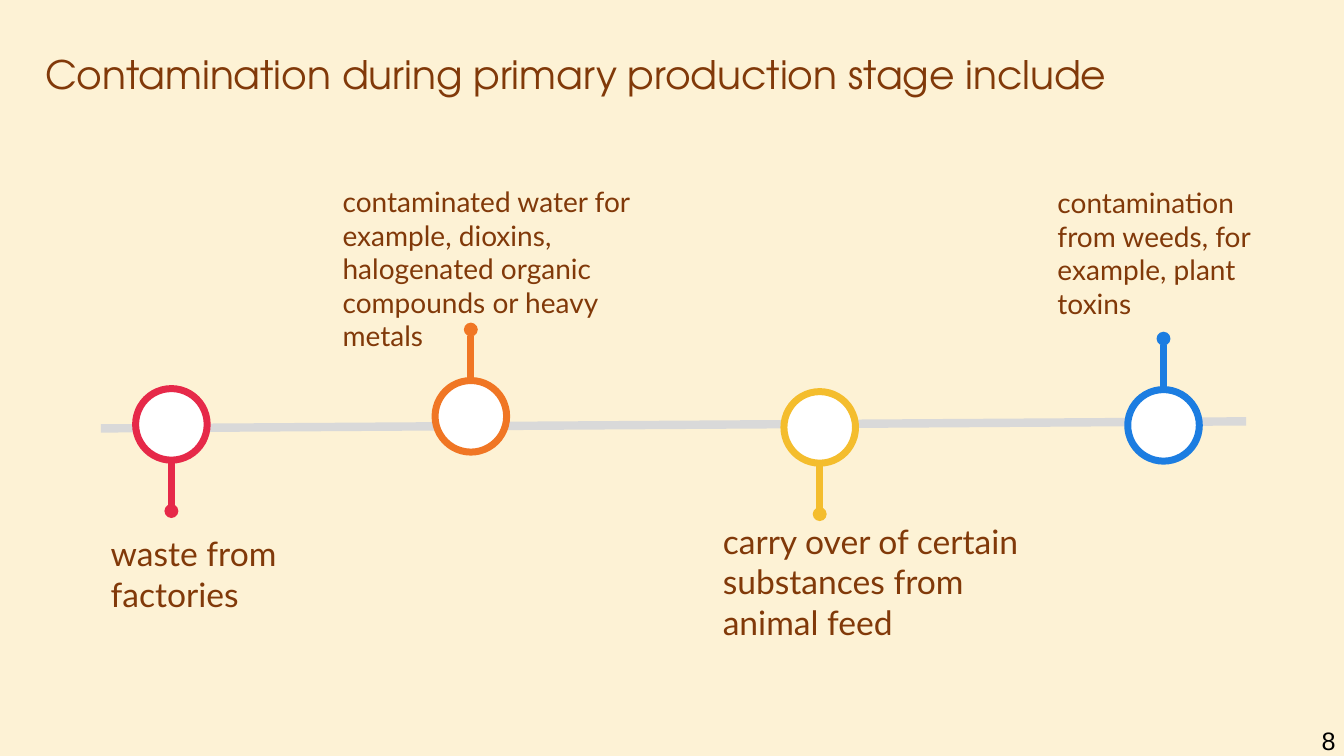
from lxml import etree
from pptx import Presentation
from pptx.dml.color import RGBColor
from pptx.enum.shapes import MSO_CONNECTOR, MSO_SHAPE
from pptx.enum.text import MSO_ANCHOR
from pptx.oxml.ns import qn
from pptx.util import Inches, Pt

STRAIGHT = MSO_CONNECTOR.STRAIGHT
OVAL = MSO_SHAPE.OVAL
TOP = MSO_ANCHOR.TOP
MIDDLE = MSO_ANCHOR.MIDDLE

COLORS = {
    "background": "FDF2D5",
    "brown": "813909",
    "black": "000000",
    "white": "FFFFFF",
    "gray": "D9D9D9",
    "red": "E62949",
    "orange": "F07624",
    "yellow": "F4BD2D",
    "blue": "1C7DE1",
}

TITLE = "Contamination during primary production stage include"
PAGE_NUMBER = "8"
AXIS = ((1, 4.25), (12.36, 4.18))
RING_SIZE = 0.71
STEM_LENGTH = 0.86
UP, DOWN = -1, 1

SOURCES = [
    {"label": "waste from factories", "color": "red", "center": (1.7, 4.21),
     "direction": DOWN, "box": (1, 5.24, 2.3, 1.14), "size": 24},
    {"label": "contaminated water for example, dioxins, halogenated organic "
              "compounds or heavy metals", "color": "orange", "center": (4.67, 4.13),
     "direction": UP, "box": (3.3, 1.78, 3.47, 2.05), "size": 20},
    {"label": "carry over of certain substances from animal feed", "color": "yellow",
     "center": (8.13, 4.24), "direction": DOWN, "box": (7.07, 5.12, 3.32, 1.31), "size": 24},
    {"label": "contamination from weeds, for example, plant toxins", "color": "blue",
     "center": (11.54, 4.22), "direction": UP, "box": (10.39, 1.79, 2.3, 1.45), "size": 20},
]


def rgb(name):
    return RGBColor.from_string(COLORS[name])


def add_text(slide, text, box, size, font, color="brown", anchor=TOP):
    frame = slide.shapes.add_textbox(*map(Inches, box)).text_frame
    frame.word_wrap = True
    frame.vertical_anchor = anchor
    frame.text = text
    paragraph = frame.paragraphs[0]
    run_font = paragraph.runs[0].font
    run_font.size = Pt(size)
    run_font.name = font
    run_font.color.rgb = rgb(color)
    return paragraph


def add_line(slide, start, end, color, width, dotted_ends=False):
    connector = slide.shapes.add_connector(STRAIGHT, *map(Inches, start + end))
    connector.line.color.rgb = rgb(color)
    connector.line.width = Pt(width)
    properties = connector._element.spPr
    if dotted_ends:
        outline = properties.find(qn("a:ln"))
        for tag in ("a:headEnd", "a:tailEnd"):
            etree.SubElement(outline, qn(tag), type="oval", w="sm", len="sm")
    etree.SubElement(properties, qn("a:effectLst"))


def add_marker(slide, center, direction, color):
    x, y = center
    add_line(slide, (x, y + direction * STEM_LENGTH), center, color, 5, dotted_ends=True)
    corner = (x - RING_SIZE / 2, y - RING_SIZE / 2)
    ring = slide.shapes.add_shape(OVAL, *map(Inches, corner + (RING_SIZE, RING_SIZE)))
    ring.shadow.inherit = False
    ring.fill.solid()
    ring.fill.fore_color.rgb = rgb("white")
    ring.line.color.rgb = rgb(color)
    ring.line.width = Pt(5)


def main():
    """Build the timeline slide of primary production contamination."""
    deck = Presentation()
    deck.slide_width = Inches(13.33)
    deck.slide_height = Inches(7.5)
    slide = deck.slides.add_slide(deck.slide_layouts[6])
    slide.background.fill.solid()
    slide.background.fill.fore_color.rgb = rgb("background")

    title = add_text(slide, TITLE, (0.35, 0.37, 12.66, 0.79), 28,
                     "TeX Gyre Adventor", anchor=MIDDLE)
    title.line_spacing = 0.9
    add_line(slide, *AXIS, "gray", 6)
    for source in SOURCES:
        add_marker(slide, source["center"], source["direction"], source["color"])
    for source in SOURCES:
        add_text(slide, source["label"], source["box"], source["size"], "Lato")
    add_text(slide, PAGE_NUMBER, (13.01, 7.15, 0.32, 0.4), 18, "Arial", "black")
    deck.save("out.pptx")


if __name__ == "__main__":
    main()
